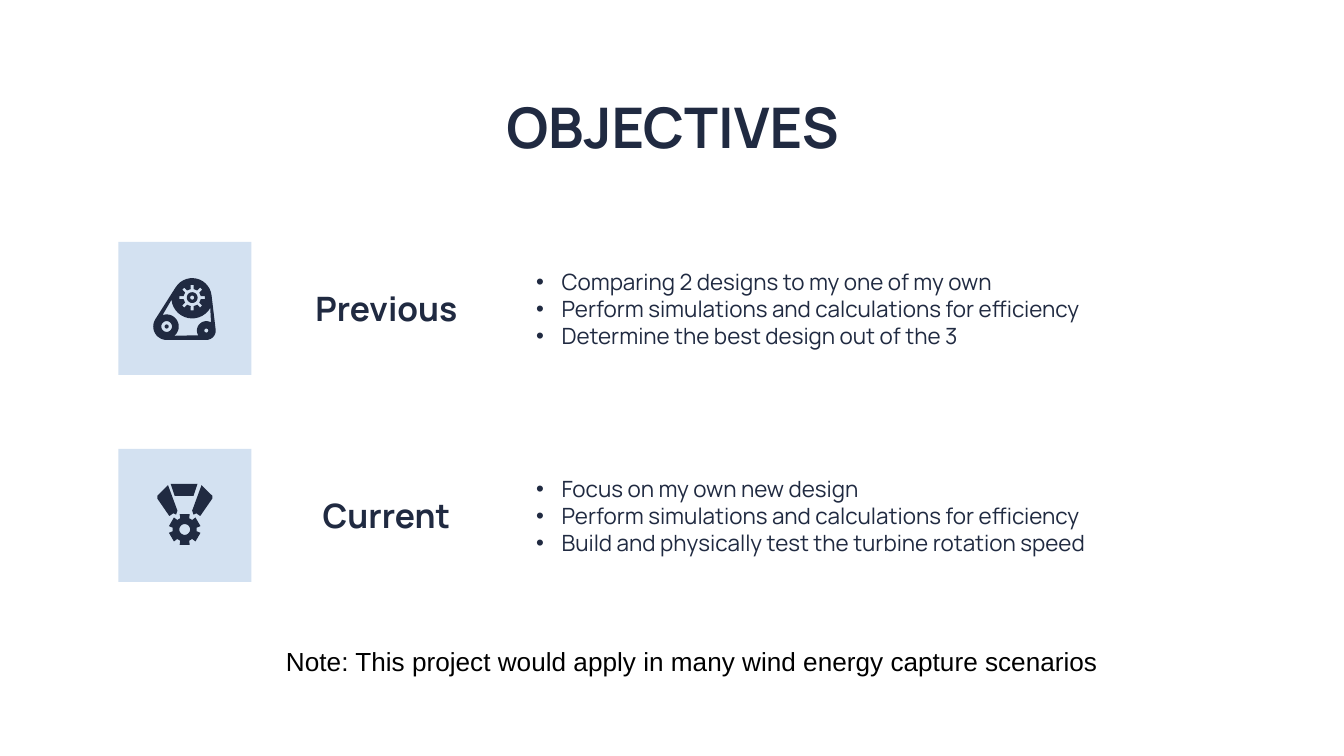
import math

import lxml.etree
import pptx
import pptx.dml.color
import pptx.enum.shapes
import pptx.enum.text
import pptx.oxml.ns
import pptx.util

Inches = pptx.util.Inches
Pt = pptx.util.Pt
ALIGN = pptx.enum.text.PP_ALIGN
ANCHOR = pptx.enum.text.MSO_ANCHOR

NAVY = "202A41"
PALE_BLUE = "D3E1F1"
FONT = "Manrope"
ROW_LEFT, ROW_TOP, ROW_PITCH, ROW_SIZE = 0.88, 1.8, 1.54, 0.99


def rgb(hex_colour):
    return pptx.dml.color.RGBColor.from_string(hex_colour)


def paint(shape, colour):
    shape.shadow.inherit = False
    shape.fill.solid()
    shape.fill.fore_color.rgb = rgb(colour)
    shape.line.fill.background()


def style(paragraph, size, colour=NAVY, name=FONT, bold=False):
    font = paragraph.font
    font.size, font.name, font.bold = Pt(size), name, bold
    font.color.rgb = rgb(colour)


def set_frame(frame, anchor, inset=0.1):
    frame.word_wrap = True
    frame.auto_size = pptx.enum.text.MSO_AUTO_SIZE.NONE
    frame.vertical_anchor = anchor
    frame.margin_left = frame.margin_right = Inches(0.1)
    frame.margin_top = frame.margin_bottom = Inches(inset)


def add_text_box(slide, left, top, width, height, anchor, inset=0.1):
    box = slide.shapes.add_textbox(Inches(left), Inches(top), Inches(width), Inches(height))
    set_frame(box.text_frame, anchor, inset)
    return box.text_frame


def add_bullet(paragraph):
    properties = paragraph._p.get_or_add_pPr()
    properties.set("marL", str(Inches(0.19)))
    properties.set("indent", str(-Inches(0.19)))
    colour = lxml.etree.SubElement(properties, pptx.oxml.ns.qn("a:buClr"))
    lxml.etree.SubElement(colour, pptx.oxml.ns.qn("a:srgbClr")).set("val", NAVY)
    lxml.etree.SubElement(properties, pptx.oxml.ns.qn("a:buFont")).set("typeface", "Arial")
    lxml.etree.SubElement(properties, pptx.oxml.ns.qn("a:buChar")).set("char", "•")


def arc(x, y, radius, start=0, end=360):
    steps = max(4, round(abs(end - start) / 10))
    angles = [math.radians(start + (end - start) * i / steps) for i in range(steps + 1)]
    return [(x + radius * math.cos(a), y + radius * math.sin(a)) for a in angles]


def gear(x, y, root, tip, teeth, tooth_share):
    half = tooth_share / 2
    outline = []
    for tooth in range(teeth):
        for share, radius in ((-half - 0.06, root), (-half, tip), (half, tip), (half + 0.06, root)):
            angle = 2 * math.pi * (tooth + share) / teeth - math.pi / 2
            outline.append((x + radius * math.cos(angle), y + radius * math.sin(angle)))
    return outline


def add_outline(slide, left, top, contours):
    placed = [[(Inches(left + x), Inches(top + y)) for x, y in contour] for contour in contours]
    builder = slide.shapes.build_freeform(*placed[0][0])
    for number, points in enumerate(placed):
        if number:
            builder.move_to(*points[0])
        builder.add_line_segments(points[1:], close=True)
    paint(builder.convert_to_shape(), NAVY)


def add_belt_icon(slide, left, top):
    wheel, tensioner, idler = (0.55, 0.415), (0.36, 0.63), (0.655, 0.66)
    belt = arc(*tensioner, 0.1, 90, 212) + arc(*wheel, 0.145, 212, 353) + arc(*idler, 0.07, -7, 90)
    gap = arc(*wheel, 0.155, 174, 30) + arc(*idler, 0.07, -60, -210) + arc(*tensioner, 0.09, 50, -110)
    add_outline(slide, left, top, [
        belt, gap, gear(*wheel, 0.065, 0.095, 8, 0.3), arc(*wheel, 0.04), arc(*wheel, 0.015),
        arc(*tensioner, 0.04), arc(*tensioner, 0.015), arc(*idler, 0.015)])


def add_medal_icon(slide, left, top):
    centre = 0.495
    ribbon = [(0.37, 0.27), (0.29, 0.35), (0.29, 0.37), (0.38, 0.5),
              (0.41, 0.48), (0.43, 0.49), (0.44, 0.46)]
    mirrored = [(2 * centre - x, y) for x, y in ribbon]
    clasp = [(0.39, 0.26), (0.42, 0.35), (0.56, 0.35), (0.59, 0.26)]
    for part in (ribbon, mirrored, clasp):
        add_outline(slide, left, top, [part])
    add_outline(slide, left, top, [gear(centre, 0.6, 0.09, 0.12, 6, 0.6), arc(centre, 0.6, 0.04)])


def add_title(slide, left, top, width, height):
    title = slide.shapes.title
    title.left, title.top = Inches(left), Inches(top)
    title.width, title.height = Inches(width), Inches(height)
    set_frame(title.text_frame, ANCHOR.TOP)
    title.text_frame.text = "OBJECTIVES"
    heading = title.text_frame.paragraphs[0]
    heading.alignment = ALIGN.CENTER
    style(heading, 30, bold=True)


def add_objective_row(slide, left, top, size, add_icon, label, goals):
    tile = slide.shapes.add_shape(pptx.enum.shapes.MSO_SHAPE.RECTANGLE,
                                  Inches(left), Inches(top), Inches(size), Inches(size))
    paint(tile, PALE_BLUE)
    add_icon(slide, left, top)

    period = add_text_box(slide, left + 1.15, top, 1.69, size, ANCHOR.MIDDLE).paragraphs[0]
    period.text = label
    period.alignment = ALIGN.CENTER
    style(period, 18, bold=True)

    goal_frame = add_text_box(slide, left + 3.01, top, 5.24, size, ANCHOR.MIDDLE)
    for number, goal in enumerate(goals):
        item = goal_frame.add_paragraph() if number else goal_frame.paragraphs[0]
        item.text = goal
        add_bullet(item)
        style(item, 12)


def add_note(slide, left, top, width, height):
    note = add_text_box(slide, left, top, width, height, ANCHOR.TOP, 0.05).paragraphs[0]
    note.text = "Note: This project would apply in many wind energy capture scenarios"
    style(note, 14, "000000", "Arial")


def main():
    deck = pptx.Presentation()
    deck.slide_width = Inches(10)
    deck.slide_height = deck.slide_width * 9 // 16
    slide = deck.slides.add_slide(deck.slide_layouts[5])
    add_title(slide, 0.79, 0.59, 8.43, 0.63)
    simulations = "Perform simulations and calculations for efficiency"
    objectives = [
        (add_belt_icon, "Previous", ["Comparing 2 designs to my one of my own", simulations,
                                     "Determine the best design out of the 3"]),
        (add_medal_icon, "Current", ["Focus on my own new design", simulations,
                                     "Build and physically test the turbine rotation speed"]),
    ]
    for row, objective in enumerate(objectives):
        add_objective_row(slide, ROW_LEFT, ROW_TOP + row * ROW_PITCH, ROW_SIZE, *objective)
    add_note(slide, 2.03, 4.75, 6.63, 0.34)
    deck.save("out.pptx")


if __name__ == "__main__":
    main()
